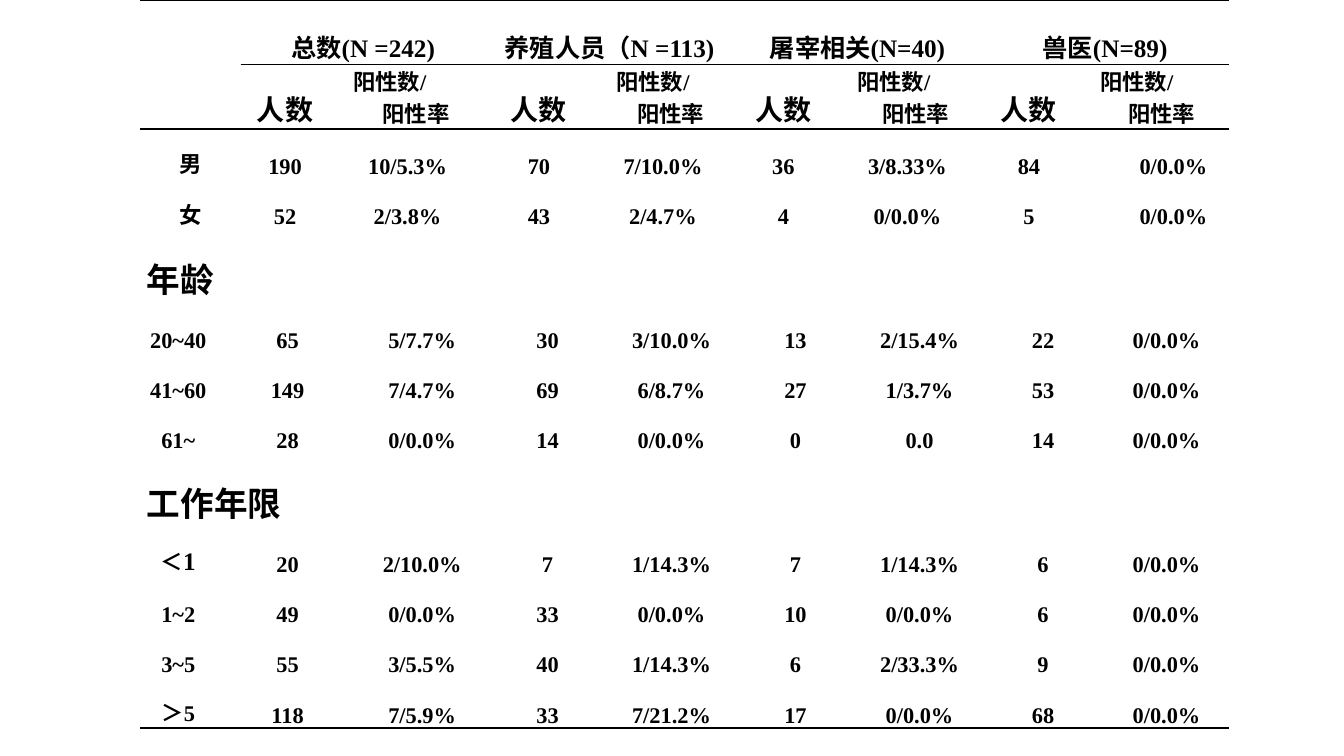
import pptx
import pptx.util
import pptx.enum.text
import pptx.dml.color
import lxml.etree

Pt = pptx.util.Pt
PP = pptx.enum.text.PP_ALIGN
hues = {"ink": "000000"}
serif, sans = "Times New Roman", "Calibri"

deck = pptx.Presentation()
deck.slide_width, deck.slide_height = Pt(960), Pt(540)
slide = deck.slides.add_slide(deck.slide_layouts[6])

# Data: header groups, then a label and eight values per row
groups = ["总数(N =242)", "养殖人员（N =113)", "屠宰相关(N=40)", "兽医(N=89)"]
rates = [33, 27, 30, 32]  # left indent of the second line of each rate head
rows = [
    "男 190 10/5.3% 70 7/10.0% 36 3/8.33% 84 0/0.0%",
    "女 52 2/3.8% 43 2/4.7% 4 0/0.0% 5 0/0.0%",
    "年龄",
    "20~40 65 5/7.7% 30 3/10.0% 13 2/15.4% 22 0/0.0%",
    "41~60 149 7/4.7% 69 6/8.7% 27 1/3.7% 53 0/0.0%",
    "61~ 28 0/0.0% 14 0/0.0% 0 0.0 14 0/0.0%",
    "工作年限",
    "＜1 20 2/10.0% 7 1/14.3% 7 1/14.3% 6 0/0.0%",
    "1~2 49 0/0.0% 33 0/0.0% 10 0/0.0% 6 0/0.0%",
    "3~5 55 3/5.5% 40 1/14.3% 6 2/33.3% 9 0/0.0%",
    "＞5 118 7/5.9% 33 7/21.2% 17 0/0.0% 68 0/0.0%",
]

# Table grid
widths = [54.7, 7.2, 63.4, 20.9, 90.7, 76.3, 12.2, 88.6, 71.3, 17.3, 88.6, 67.7, 20.2, 88.6]
heights = [46, 46, 36, 36, 52, 36, 36, 36, 52, 36, 36, 36, 36]
frame = slide.shapes.add_table(13, 14, Pt(100), 0, Pt(sum(widths)), Pt(sum(heights)))
table = frame.table
table.first_row = table.horz_banding = False
for col, width in zip(table.columns, widths):
    col.width = Pt(width)
for row, height in zip(table.rows, heights):
    row.height = Pt(height)

# Rules above and below the rows, in points
rules = {0: (1.5, 1), 1: (1, 1), 2: (1, 0), 12: (0, 1.5)}
for r in range(13):
    for c in range(14):
        cell = table.cell(r, c)
        props = cell._tc.get_or_add_tcPr()
        top, base = rules.get(r, (0, 0))
        if r == 1 and c < 2:
            top = 0
        for tag, wide in (("lnL", 0), ("lnR", 0), ("lnT", top), ("lnB", base)):
            line = lxml.etree.SubElement(props, pptx.oxml.ns.qn("a:" + tag), w=str(Pt(wide)))
            if wide:
                fill = lxml.etree.SubElement(line, pptx.oxml.ns.qn("a:solidFill"))
                lxml.etree.SubElement(fill, pptx.oxml.ns.qn("a:srgbClr"), val=hues["ink"])
            else:
                lxml.etree.SubElement(line, pptx.oxml.ns.qn("a:noFill"))
        cell.fill.background()


def add_run(para, text, size, face):
    run = para.add_run()
    run.text = text
    run.font.size, run.font.name, run.font.bold = Pt(size), face, True
    run.font.color.rgb = pptx.dml.color.RGBColor.from_string(hues["ink"])


def open_cell(r, c, end, align=PP.CENTER):
    """Merge columns c up to end and return the paragraph of the cell."""
    cell = table.cell(r, c)
    if end - c > 1:
        cell.merge(table.cell(r, end - 1))
    cell.margin_left = cell.margin_right = Pt(5)
    cell.margin_top = cell.margin_bottom = 0
    cell.vertical_anchor = pptx.enum.text.MSO_ANCHOR.BOTTOM
    para = cell.text_frame.paragraphs[0]
    para.alignment = align
    return para


# Two header rows
table.cell(0, 0).merge(table.cell(1, 1))
for i, group in enumerate(groups):
    c = 2 + 3 * i
    add_run(open_cell(0, c, c + 3), group, 18, serif)
    add_run(open_cell(1, c, c + 1), "人数", 20, sans)
    para = open_cell(1, c + 1, c + 3, PP.LEFT)
    props = para._p.get_or_add_pPr()
    props.set("marL", str(Pt(rates[i])))
    props.set("indent", str(Pt(12 - rates[i])))
    add_run(para, "阳性数/", 16, serif)
    para.add_line_break()
    add_run(para, "阳性率", 16, serif)

# Body rows: the sex rows merge the columns unlike the rest
sexes = [0, 2, 3, 5, 6, 8, 9, 11, 12, 14]
others = [0, 1, 4, 5, 7, 8, 10, 11, 13, 14]
for r, row in enumerate(rows, 2):
    words = row.split()
    if len(words) == 1:
        add_run(open_cell(r, 0, 14, PP.LEFT), row, 24, sans)
        continue
    edges = sexes if r < 4 else others
    for word, c, end in zip(words, edges, edges[1:]):
        para = open_cell(r, c, end)
        if r < 4 and c == 12:
            para._p.get_or_add_pPr().set("marL", str(Pt(30)))
        if word == "＜1":
            add_run(para, "＜", 16, serif)
            add_run(para, "1", 18, serif)
        else:
            add_run(para, word, 16, serif)

deck.save("out.pptx")
